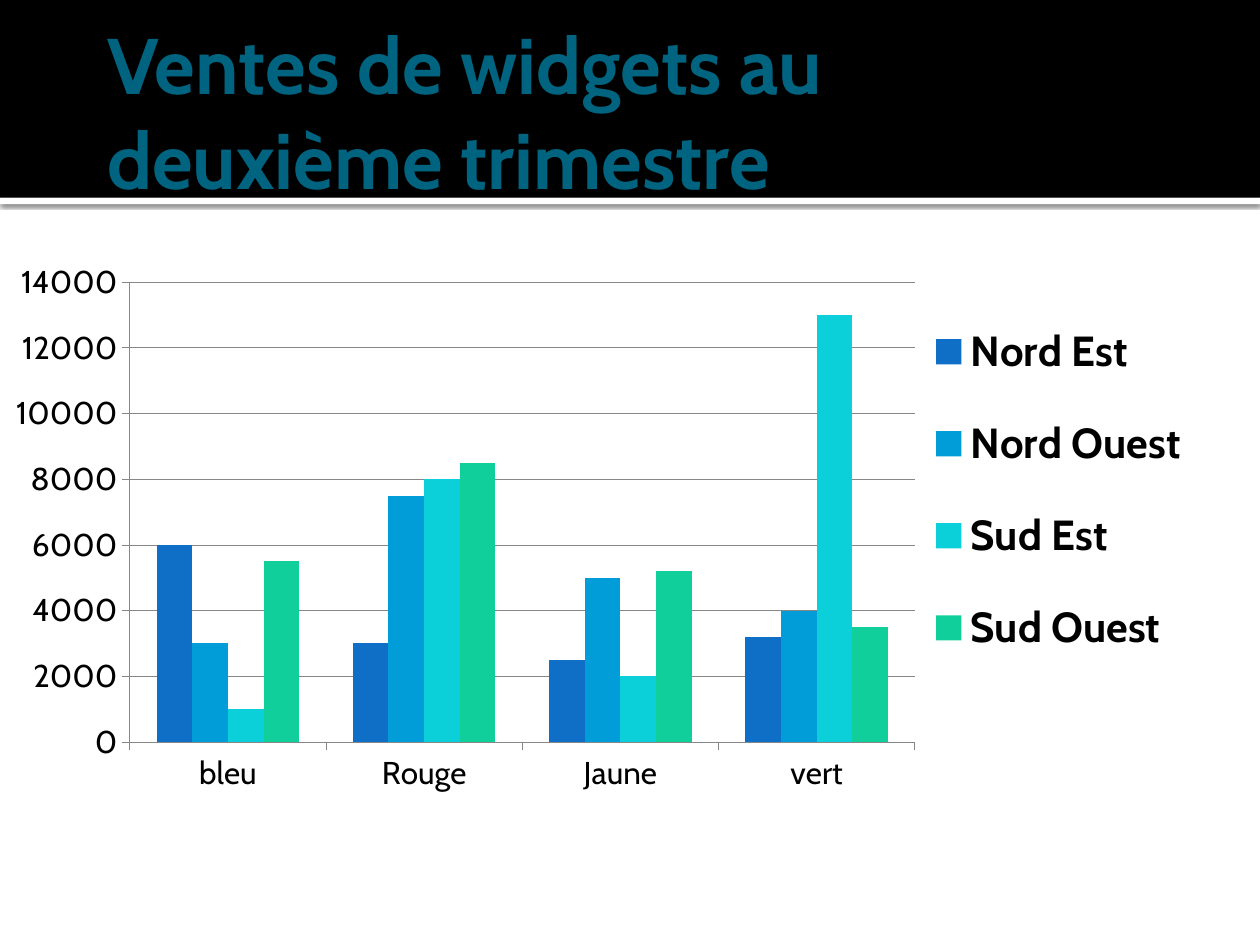
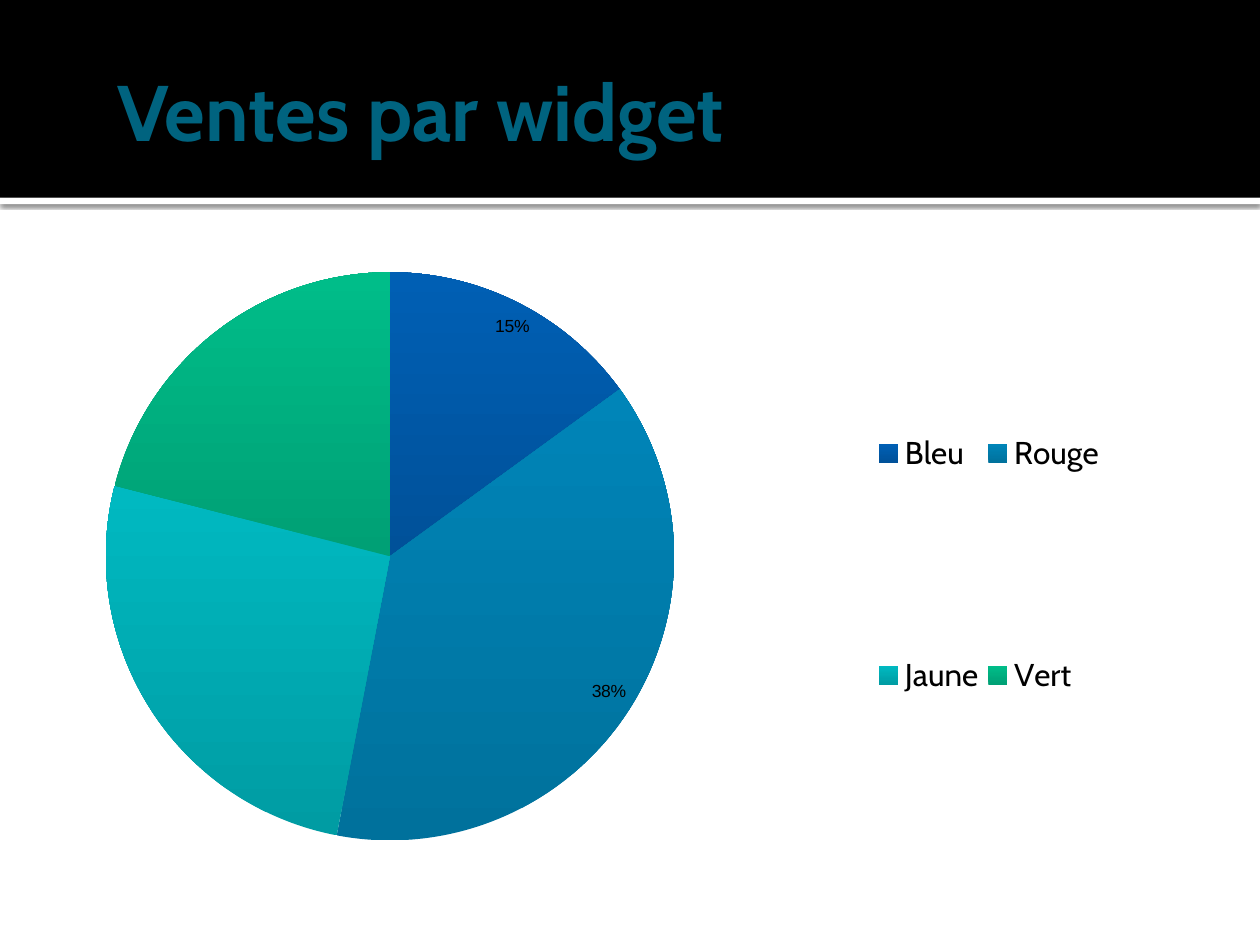
from typing import NamedTuple

from lxml import etree
from pptx import Presentation
from pptx.chart.chart import Chart
from pptx.chart.data import CategoryChartData
from pptx.dml.color import RGBColor
from pptx.enum.chart import XL_CHART_TYPE, XL_LABEL_POSITION, XL_LEGEND_POSITION
from pptx.enum.chart import XL_TICK_LABEL_POSITION, XL_TICK_MARK
from pptx.enum.shapes import MSO_SHAPE
from pptx.enum.text import MSO_ANCHOR, MSO_AUTO_SIZE, PP_ALIGN
from pptx.oxml import parse_xml
from pptx.oxml.ns import nsdecls, qn
from pptx.slide import Slide, SlideLayout
from pptx.util import Inches, Pt

COLUMNS = XL_CHART_TYPE.COLUMN_CLUSTERED
PIE = XL_CHART_TYPE.PIE
BEST_FIT = XL_LABEL_POSITION.BEST_FIT
RIGHT = XL_LEGEND_POSITION.RIGHT
LOW = XL_TICK_LABEL_POSITION.LOW
OUTSIDE = XL_TICK_MARK.OUTSIDE
NO_TICK = XL_TICK_MARK.NONE
RECTANGLE = MSO_SHAPE.RECTANGLE
MIDDLE = MSO_ANCHOR.MIDDLE
NO_AUTOFIT = MSO_AUTO_SIZE.NONE
LEFT = PP_ALIGN.LEFT

BLACK = RGBColor(0x00, 0x00, 0x00)
WHITE = RGBColor(0xFF, 0xFF, 0xFF)
TITLE_TEAL = RGBColor(0x00, 0x63, 0x7F)
AXIS_GREY = RGBColor(0x87, 0x87, 0x87)
REGION_COLORS = (
    RGBColor(0x0F, 0x6F, 0xC6),
    RGBColor(0x00, 0x9D, 0xD9),
    RGBColor(0x0B, 0xD0, 0xD9),
    RGBColor(0x10, 0xCF, 0x9B),
)
SLICE_GRADIENTS = (
    (RGBColor(0x00, 0x51, 0x99), RGBColor(0x00, 0x5F, 0xB4)),
    (RGBColor(0x00, 0x71, 0x9C), RGBColor(0x00, 0x85, 0xB8)),
    (RGBColor(0x00, 0x9C, 0xA3), RGBColor(0x00, 0xB9, 0xC1)),
    (RGBColor(0x00, 0xA0, 0x75), RGBColor(0x00, 0xBD, 0x89)),
)

TITLE_FORMAT = {"name": "Cabin", "size": Pt(45), "bold": True}
CHART_FORMAT = {"name": "Arial", "size": Pt(10)}
LABEL_FORMAT = {"name": "Cabin", "size": Pt(18), "bold": False}
REGION_LEGEND_FORMAT = {"name": "Cabin", "size": Pt(24), "bold": True}
LABELLED_SLICES = (0, 1)


class Band(NamedTuple):
    top: float
    height: float
    color: RGBColor
    shadowed: bool


class Area(NamedTuple):
    """A rectangle given as fractions of its chart."""
    x: float
    y: float
    w: float
    h: float


class ChartSlide(NamedTuple):
    title: str
    title_left: float
    kind: XL_CHART_TYPE
    top: float
    height: float
    categories: tuple[str, ...]
    series: dict[str, tuple[int, ...]]
    plot_area: Area
    legend_area: Area
    legend_format: dict


BANDS = (
    Band(1.57, 0.05, WHITE, True),
    Band(0, 1.57, BLACK, False),
)
REGIONS = ChartSlide(
    "Ventes de widgets au deuxième trimestre", 0.75, COLUMNS, 1.92, 4.92,
    ("bleu", "Rouge", "Jaune", "vert"),
    {
        "Nord Est": (6000, 3000, 2500, 3200),
        "Nord Ouest": (3000, 7500, 5000, 4000),
        "Sud Est": (1000, 8000, 2000, 13000),
        "Sud Ouest": (5500, 8500, 5200, 3500),
    },
    Area(0.103, 0.065, 0.623, 0.742), Area(0.73, 0.07, 0.22, 0.66),
    REGION_LEGEND_FORMAT,
)
WIDGETS = ChartSlide(
    "Ventes par widget", 0.83, PIE, 1.58, 5.92,
    ("Bleu", "Rouge", "Jaune", "Vert"),
    {"Series 1": (15, 38, 26, 21)},
    Area(0.084, 0.098, 0.451, 0.762), Area(0.69, 0.07, 0.19, 0.84),
    LABEL_FORMAT,
)


def format_font(font, values: dict, color: RGBColor = BLACK) -> None:
    for name, value in values.items():
        setattr(font, name, value)
    font.color.rgb = color


def format_line(line) -> None:
    line.color.rgb = AXIS_GREY
    line.width = Pt(0.5)


def add_bands(slide: Slide, layout: SlideLayout) -> None:
    """Make the heading bands and put them at the back of the shared layout."""
    for index, band in enumerate(BANDS):
        box = slide.shapes.add_shape(
            RECTANGLE, 0, Inches(band.top), Inches(10), Inches(band.height))
        box.fill.solid()
        box.fill.fore_color.rgb = band.color
        box.line.fill.background()
        box.shadow.inherit = False
        if band.shadowed:
            effects = box.element.spPr.find(qn("a:effectLst"))
            effects.append(parse_xml(
                f'<a:outerShdw {nsdecls("a")} blurRad="{Pt(2.5)}" dist="{Pt(0.8)}" '
                'dir="5400000" algn="tl" rotWithShape="0"><a:srgbClr val="000000">'
                '<a:alpha val="60000"/></a:srgbClr></a:outerShdw>'))
        box.element.nvSpPr.cNvPr.set("id", str(100 + index))
        layout.shapes.element.insert(2 + index, box.element)


def set_title(slide: Slide, text: str, left: float) -> None:
    title = slide.shapes.title
    title.left, title.top = Inches(left), Inches(0.25)
    title.width, title.height = Inches(8.5), Inches(1.25)
    frame = title.text_frame
    frame.text = text
    frame_format = {
        "auto_size": NO_AUTOFIT, "word_wrap": True, "vertical_anchor": MIDDLE,
        "margin_left": Inches(0.1), "margin_right": Inches(0.05),
        "margin_top": Inches(0.05), "margin_bottom": Inches(0.05),
    }
    for name, value in frame_format.items():
        setattr(frame, name, value)
    para = frame.paragraphs[0]
    para.alignment = LEFT
    format_font(para.runs[0].font, TITLE_FORMAT, TITLE_TEAL)


def make_layout(area: Area, inner: bool) -> etree.ElementBase:
    target = '<c:layoutTarget val="inner"/>' if inner else ""
    modes = "".join(f'<c:{axis}Mode val="edge"/>' for axis in "xy")
    sizes = "".join(f'<c:{name} val="{value}"/>' for name, value in area._asdict().items())
    return parse_xml(f'<c:layout {nsdecls("c")}><c:manualLayout>{target}{modes}{sizes}'
                     '</c:manualLayout></c:layout>')


def place_parts(chart: Chart, plot_area: Area, legend_area: Area) -> None:
    """Fix the places of the plot and the legend inside the chart."""
    for old in chart.element.xpath("//c:plotArea/c:layout | //c:legend/c:layout"):
        old.getparent().remove(old)
    chart.element.xpath("//c:plotArea")[0].insert(0, make_layout(plot_area, True))
    position = chart.element.xpath("//c:legend/c:legendPos")[0]
    position.addnext(make_layout(legend_area, False))


def add_chart(slide: Slide, content: ChartSlide) -> Chart:
    data = CategoryChartData()
    data.categories = content.categories
    for name, values in content.series.items():
        data.add_series(name, values)
    chart = slide.shapes.add_chart(
        content.kind, 0, Inches(content.top), Inches(10), Inches(content.height), data).chart
    chart.has_title = False
    format_font(chart.font, CHART_FORMAT)
    chart.has_legend = True
    chart.legend.position = RIGHT
    chart.legend.include_in_layout = True
    format_font(chart.legend.font, content.legend_format)
    place_parts(chart, content.plot_area, content.legend_area)
    return chart


def style_columns(chart: Chart) -> None:
    plot = chart.plots[0]
    plot.vary_by_categories = False
    plot.gap_width = 150
    plot.overlap = 0
    for series, color in zip(plot.series, REGION_COLORS):
        series.format.fill.solid()
        series.format.fill.fore_color.rgb = color
        series.invert_if_negative = False
    for axis in (chart.category_axis, chart.value_axis):
        axis.major_tick_mark = OUTSIDE
        axis.minor_tick_mark = NO_TICK
        format_line(axis.format.line)
        format_font(axis.tick_labels.font, LABEL_FORMAT)
    chart.category_axis.tick_label_position = LOW
    chart.category_axis.has_major_gridlines = False
    chart.value_axis.has_major_gridlines = True
    format_line(chart.value_axis.major_gridlines.format.line)
    chart.value_axis.tick_labels.number_format = "General"
    chart.value_axis.tick_labels.number_format_is_linked = False


def style_pie(chart: Chart) -> None:
    plot = chart.plots[0]
    plot.vary_by_categories = True
    series = plot.series[0]
    for index, colors in enumerate(SLICE_GRADIENTS):
        fill = series.points[index].format.fill
        fill.gradient()
        fill.gradient_angle = 90
        for stop, color in zip(fill.gradient_stops, colors):
            stop.color.rgb = color
    series.data_labels.show_value = False
    series.data_labels.show_percentage = False
    for index in LABELLED_SLICES:
        series.points[index].data_label.position = BEST_FIT
    for name, shown in {"showVal": "0", "showPercent": "1"}.items():
        for flag in chart.element.xpath(f"//c:dLbl/c:{name}"):
            flag.set("val", shown)


def main() -> None:
    deck = Presentation()
    deck.slide_width, deck.slide_height = Inches(10), Inches(7.5)
    layout = deck.slide_layouts.get_by_name("Title Only")
    for content, style in ((REGIONS, style_columns), (WIDGETS, style_pie)):
        page = deck.slides.add_slide(layout)
        set_title(page, content.title, content.title_left)
        style(add_chart(page, content))
    add_bands(deck.slides[0], layout)
    deck.save("out.pptx")


if __name__ == "__main__":
    main()
